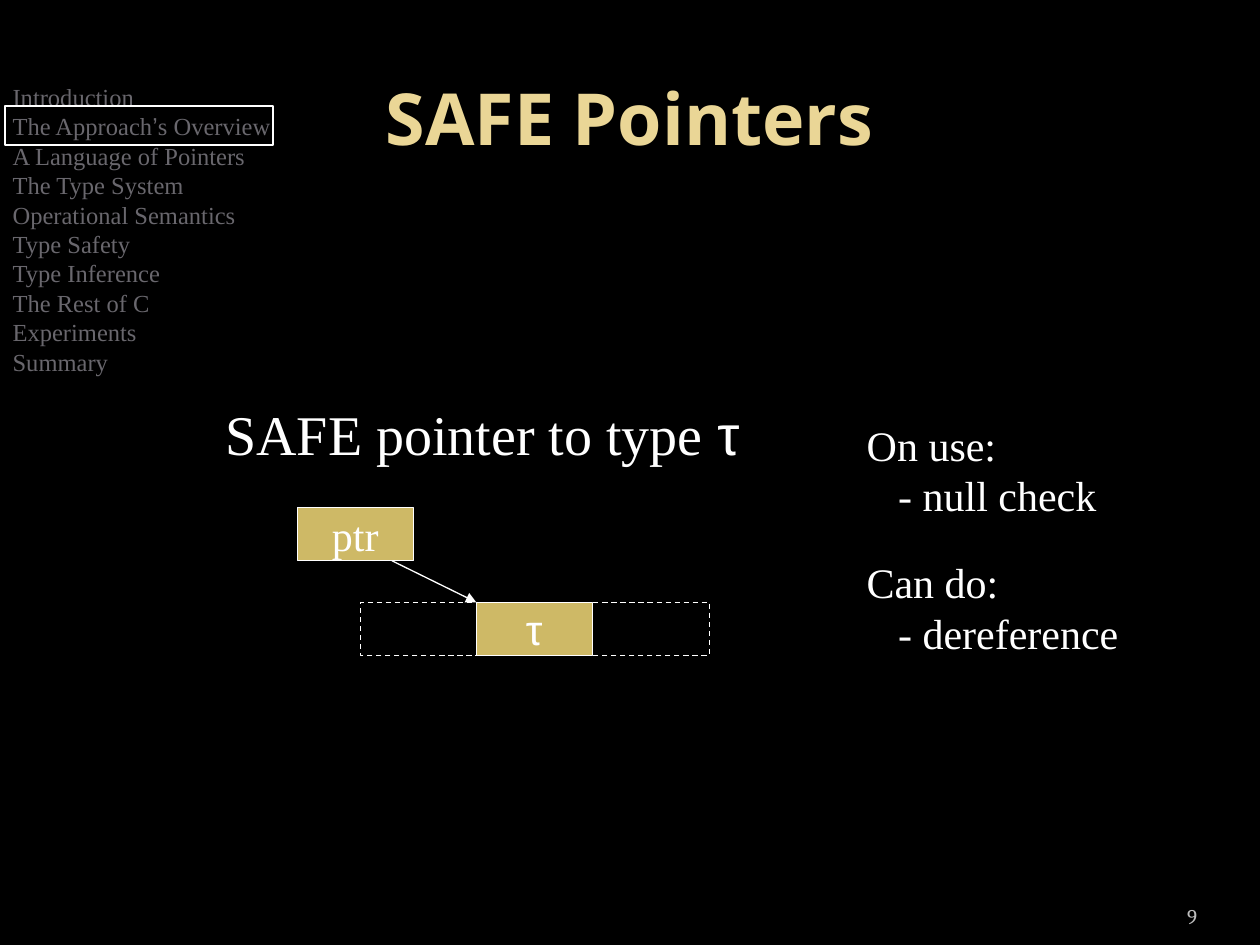
from dataclasses import dataclass
from itertools import groupby
from typing import Optional

from lxml.etree import SubElement
from pptx import Presentation
from pptx.dml.color import RGBColor
from pptx.enum.dml import MSO_LINE
from pptx.enum.shapes import MSO_CONNECTOR, MSO_SHAPE
from pptx.enum.text import MSO_ANCHOR, PP_ALIGN
from pptx.oxml.ns import qn
from pptx.util import Inches, Pt


@dataclass(frozen=True)
class Theme:
    back: str = "000000"
    gold: str = "EAD696"
    fill: str = "CEB966"
    white: str = "FFFFFF"
    muted: str = "69676D"
    pale: str = "BDBDBD"
    serif: str = "Times New Roman"
    sans: str = "Arial"
    head: str = "Open Sans"
    foot: str = "Cambria"
    title: int = 41
    lead: int = 32
    body: int = 24
    menu: int = 14
    small: int = 12


T = Theme()
SANS = "τ’"  # characters set in the sans font


@dataclass(frozen=True)
class Area:
    left: float
    top: float
    width: float
    height: float

    def emu(self) -> tuple:
        return tuple(map(Inches, (self.left, self.top, self.width, self.height)))


@dataclass(frozen=True)
class Style:
    size: int
    color: str = T.white
    face: str = T.serif
    bold: bool = False
    align: PP_ALIGN = PP_ALIGN.LEFT
    anchor: MSO_ANCHOR = MSO_ANCHOR.TOP
    wrap: bool = False


@dataclass(frozen=True)
class Note:
    area: Area
    lines: tuple
    style: Style


@dataclass(frozen=True)
class Box:
    area: Area
    text: str = ""
    fill: Optional[str] = None
    width: float = 0.75
    dash: bool = False


def rgb(code: str) -> RGBColor:
    return RGBColor.from_string(code)


def write(frame, lines: tuple, style: Style) -> None:
    """Fill a text frame; lines that start with a dash are indented."""
    frame.word_wrap = style.wrap
    frame.vertical_anchor = style.anchor
    for i, line in enumerate(lines):
        para = frame.paragraphs[0] if i == 0 else frame.add_paragraph()
        para.alignment = style.align
        para.space_before = Pt(0)
        font = para.font
        font.name, font.size, font.bold = style.face, Pt(style.size), style.bold
        font.color.rgb = rgb(style.color)
        for sans, part in groupby(line, lambda c: c in SANS):
            run = para.add_run()
            run.text = "".join(part)
            if sans:
                run.font.name = T.sans
        props = para._p.get_or_add_pPr()
        props.set("marL", str(Inches(0.25 if line.startswith("-") else 0)))
        props.set("indent", "0")
        props.insert_element_before(props.makeelement(qn("a:buNone"), {}), "a:defRPr")


def place(shape, area: Area) -> None:
    shape.left, shape.top, shape.width, shape.height = area.emu()


def add_note(slide, note: Note) -> None:
    frame = slide.shapes.add_textbox(*note.area.emu()).text_frame
    write(frame, note.lines, note.style)


def add_box(slide, box: Box) -> None:
    shape = slide.shapes.add_shape(MSO_SHAPE.RECTANGLE, *box.area.emu())
    shape.shadow.inherit = False
    if box.fill:
        shape.fill.solid()
        shape.fill.fore_color.rgb = rgb(box.fill)
    else:
        shape.fill.background()
    shape.line.color.rgb = rgb(T.white)
    shape.line.width = Pt(box.width)
    if box.dash:
        shape.line.dash_style = MSO_LINE.DASH
    if box.text:
        write(shape.text_frame, (box.text,), LABEL)


def add_arrow(slide, start: tuple, end: tuple) -> None:
    line = slide.shapes.add_connector(
        MSO_CONNECTOR.STRAIGHT, *map(Inches, start + end))
    line.line.color.rgb = rgb(T.white)
    line.line.width = Pt(0.75)
    SubElement(line.line._get_or_add_ln(), qn("a:tailEnd"), type="triangle")
    SubElement(line._element.spPr, qn("a:effectLst"))


HEAD = Style(T.title, T.gold, T.head, True, PP_ALIGN.CENTER, MSO_ANCHOR.MIDDLE, True)
MENU = Style(T.menu, T.muted)
LEAD = Style(T.lead)
BODY = Style(T.body)
LABEL = Style(T.body, align=PP_ALIGN.CENTER, anchor=MSO_ANCHOR.MIDDLE)
FOOT = Style(T.small, T.pale, T.foot, align=PP_ALIGN.RIGHT,
             anchor=MSO_ANCHOR.BOTTOM, wrap=True)

TOPICS = (
    "Introduction", "The Approach’s Overview", "A Language of Pointers",
    "The Type System", "Operational Semantics", "Type Safety",
    "Type Inference", "The Rest of C", "Experiments", "Summary",
)
NOTES = (
    Note(Area(8.77, 7.02, 0.83, 0.4), ("9",), FOOT),
    Note(Area(1.69, 3.12, 4.3, 0.63), ("SAFE pointer to type τ",), LEAD),
    Note(Area(6.78, 3.28, 2.02, 0.9), ("On use:", "- null check"), BODY),
    Note(Area(6.78, 4.37, 2.2, 0.9), ("Can do:", "- dereference"), BODY),
)
CELL = (0.92, 0.42)
BOXES = (
    Box(Area(2.86, 4.78, 2.77, 0.42), dash=True),
    Box(Area(3.78, 4.78, *CELL), "τ", T.fill),
    Box(Area(2.36, 4.03, *CELL), "ptr", T.fill),
    Box(Area(0.04, 0.84, 2.13, 0.31), width=1),  # current topic
)


def main() -> None:
    deck = Presentation()
    deck.slide_width, deck.slide_height = Inches(10), Inches(7.5)
    slide = deck.slides.add_slide(deck.slide_layouts[1])
    slide.background.fill.solid()
    slide.background.fill.fore_color.rgb = rgb(T.back)

    # Title and topic list
    title, menu = slide.placeholders
    place(title, Area(0.5, 0.3, 9, 1.25))
    write(title.text_frame, ("SAFE Pointers",), HEAD)
    place(menu, Area(0, 0.6, 2.26, 2.43))
    write(menu.text_frame, TOPICS, MENU)

    # Notes and pointer diagram
    for note in NOTES:
        add_note(slide, note)
    for box in BOXES:
        add_box(slide, box)
    add_arrow(slide, (3.11, 4.45), (3.78, 4.78))

    deck.save("out.pptx")


if __name__ == "__main__":
    main()
